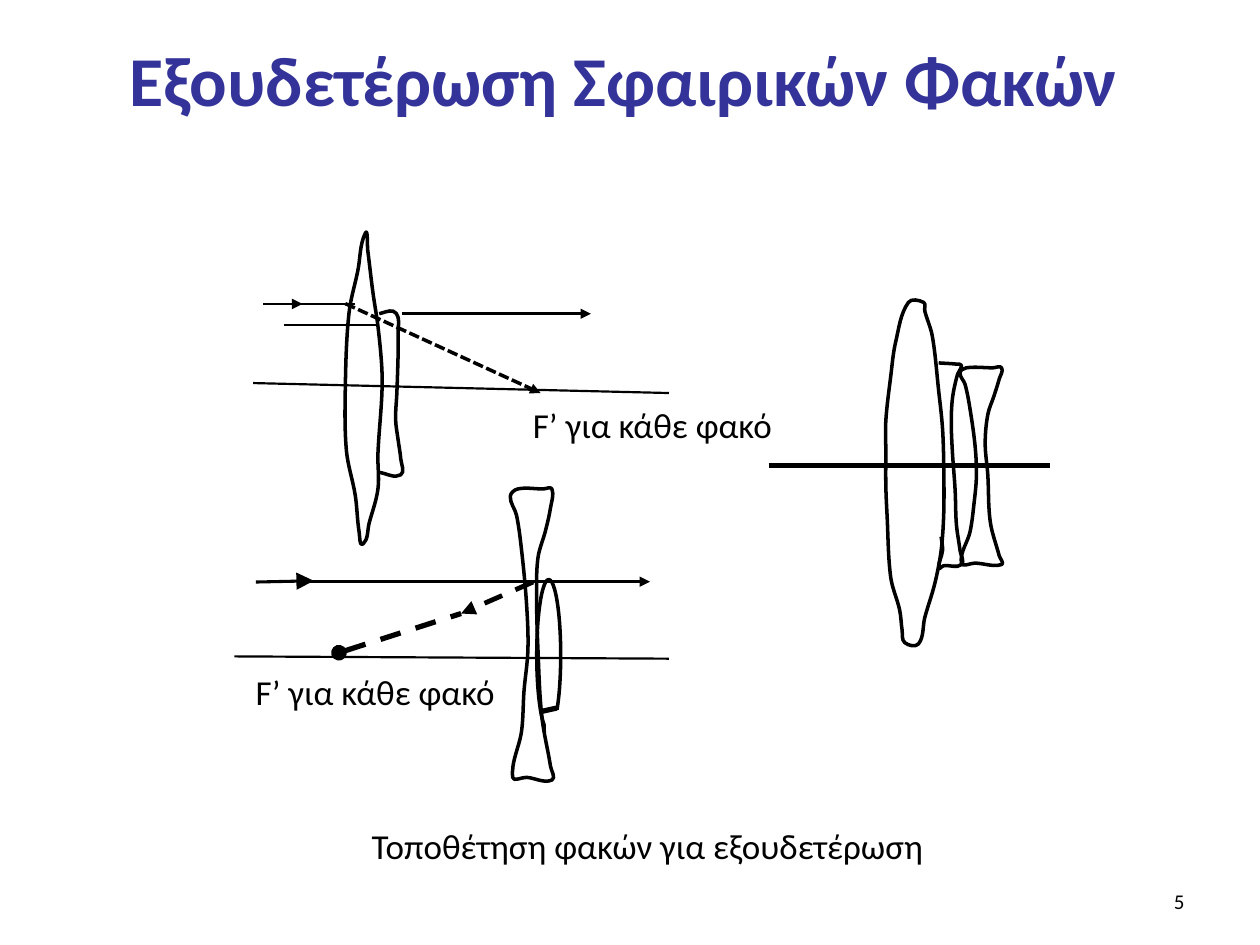
from math import hypot

from lxml import etree
from pptx import Presentation
from pptx.dml.color import RGBColor
from pptx.enum import dml, shapes, text
from pptx.oxml import ns
from pptx.util import Pt

COLORS = {"title": "333399", "ink": "000000", "paper": "FFFFFF"}
FONT = "Calibri"
FOCUS = "F’ για κάθε φακό"
DASH = dml.MSO_LINE.DASH
SYS_DASH = dml.MSO_LINE.SQUARE_DOT

# Lens outlines: points that a smooth curve runs through
CONVEX_TOP = [
    (208.8, 133.2), (204.5, 154.8), (199.4, 179.3), (197.3, 223.2), (198, 257.8),
    (203, 283), (205.2, 303.8), (207.4, 311), (211, 298.8), (216, 279.4),
    (216, 259.2), (218.2, 226), (218.2, 210.2), (216, 186.5), (213.1, 167),
    (210.2, 143.3)]
CONCAVE_TOP = [
    (216.7, 179.3), (224.6, 177.8), (227.5, 181.4), (227.5, 190.1), (227.5, 203),
    (226.8, 224.6), (226.1, 239.8), (227.5, 251.3), (229, 262.1), (229, 271.4),
    (216.7, 270)]
CONVEX_RIGHT = [
    (519.1, 172.8), (511.9, 195.1), (509, 215.3), (506.2, 240.5), (506.2, 257.8),
    (506.2, 277.2), (506.9, 293.8), (509, 329.8), (514.1, 348.5), (515.5, 360),
    (517, 367.2), (524.9, 367.9), (528.5, 352.8), (534.2, 333.4), (537.8, 314.6),
    (539.3, 293), (539.3, 266.4), (538.6, 244.8), (536.4, 223.2), (532.8, 192.2),
    (528.5, 177.8), (527.8, 172.8)]
MIDDLE_RIGHT = [
    (536.4, 207.4), (546.5, 208.1), (549.4, 208.8), (547.2, 213.8), (544.3, 227.5),
    (543.6, 241.9), (544.3, 259.2), (545.8, 280.1), (546.5, 299.5), (548.6, 314.6),
    (549.4, 322.6), (539.3, 323.3), (536.4, 324.7), (538.6, 314.6), (537.8, 306.7)]
CONCAVE_RIGHT = [
    (552.2, 210.2), (567.4, 210.2), (572.4, 210.2), (571, 216.7), (568.1, 226.1),
    (564.5, 236.9), (563, 253.4), (564.5, 271.4), (565.9, 298.1), (571, 317.5),
    (572.4, 322.6), (557.3, 321.8), (549.4, 321.8), (554.4, 303.8), (556.6, 288),
    (558, 272.2), (557.3, 255.6), (554.4, 234), (551.5, 219.6), (548.6, 213.1)]
CONCAVE_BOTTOM = [
    (295.9, 279.4), (310.3, 279.4), (315.4, 279.4), (314.6, 290.2), (311.8, 303.1),
    (307.4, 319), (306.7, 343.4), (307.4, 370.1), (309.6, 409), (314.6, 437.8),
    (315.4, 445.7), (301, 444.2), (293, 444.2), (298.1, 417.6), (299.5, 394.6),
    (301.7, 371.5), (301, 346.3), (298.1, 314.6), (295.2, 294.5), (291.6, 283.7)]


def rgb(name):
    return RGBColor.from_string(COLORS[name])


def bezier_sections(points, closed):
    """Control points and end of each section; tangents follow the neighbours."""
    n = len(points)

    def tangent(i):
        before, after = (i - 1, i + 1) if closed else (max(i - 1, 0), min(i + 1, n - 1))
        (x0, y0), (x1, y1) = points[before % n], points[after % n]
        size = hypot(x1 - x0, y1 - y0)
        return (x1 - x0) / size, (y1 - y0) / size

    for i in range(n if closed else n - 1):
        j = (i + 1) % n
        a, d = points[i], points[j]
        handle = hypot(d[0] - a[0], d[1] - a[1]) / 3
        b = [p + handle * t for p, t in zip(a, tangent(i))]
        c = [p - handle * t for p, t in zip(d, tangent(j))]
        yield b, c, d


def add_lens(slide, points, closed=True):
    corners = [(Pt(x), Pt(y)) for x, y in points]
    builder = slide.shapes.build_freeform(*corners[0])
    builder.add_line_segments(corners[1:], close=False)
    sp = builder.convert_to_shape()
    sp.shadow.inherit = False
    sp.fill.background()
    sp.line.color.rgb = rgb("ink")
    sp.line.width = Pt(2)
    # Curves in place of the straight sections
    outline = sp._element.find(".//" + ns.qn("a:path"))
    for section in outline.findall(ns.qn("a:lnTo")):
        outline.remove(section)
    for section in bezier_sections(points, closed):
        curve = etree.SubElement(outline, ns.qn("a:cubicBezTo"))
        for x, y in section:
            etree.SubElement(curve, ns.qn("a:pt"),
                             x=str(Pt(x) - sp.left), y=str(Pt(y) - sp.top))
    if closed:
        etree.SubElement(outline, ns.qn("a:close"))


def add_line(slide, x1, y1, x2, y2, width=1.25, dash=None, head=None, tail=None,
             tip="med"):
    cx = slide.shapes.add_connector(
        shapes.MSO_CONNECTOR.STRAIGHT, Pt(x1), Pt(y1), Pt(x2), Pt(y2))
    cx.line.color.rgb = rgb("ink")
    cx.line.width = Pt(width)
    if dash:
        cx.line.dash_style = dash
    ln = cx.line._get_or_add_ln()
    for tag, kind in (("a:headEnd", head), ("a:tailEnd", tail)):
        if kind:
            etree.SubElement(ln, ns.qn(tag), type=kind, w=tip, len=tip)
    etree.SubElement(cx._element.spPr, ns.qn("a:effectLst"))


def add_preset(slide, kind, x, y, w, h, line, fill=None):
    sp = slide.shapes.add_shape(kind, Pt(x), Pt(y), Pt(w), Pt(h))
    sp.shadow.inherit = False
    if fill:
        sp.fill.solid()
        sp.fill.fore_color.rgb = rgb(fill)
    else:
        sp.fill.background()
    sp.line.color.rgb = rgb(line)
    sp.line.width = Pt(2)


def write(sp, words, size, color="ink", align=text.PP_ALIGN.LEFT,
          anchor=text.MSO_ANCHOR.TOP, wrap=True, bold=False):
    tf = sp.text_frame
    tf.text = words
    tf.word_wrap = wrap
    tf.vertical_anchor = anchor
    p = tf.paragraphs[0]
    p.alignment = align
    font = p.runs[0].font
    font.name, font.size, font.bold = FONT, Pt(size), bold
    font.color.rgb = rgb(color)


def add_text(slide, x, y, w, h, words, size=20, **style):
    write(slide.shapes.add_textbox(Pt(x), Pt(y), Pt(w), Pt(h)), words, size, **style)


def draw_top_pair(slide):
    add_lens(slide, CONVEX_TOP)
    add_line(slide, 150.5, 173.7, 203, 173.7)
    add_line(slide, 150.5, 173.7, 172.8, 173.7, tail="triangle")
    add_line(slide, 229.7, 179.3, 337.7, 179.3, 1.5, tail="triangle")
    add_lens(slide, CONCAVE_TOP, closed=False)
    add_line(slide, 144.7, 218.9, 382.3, 224.6)
    add_line(slide, 197.3, 173.5, 308.9, 224.6, 2, SYS_DASH, tail="triangle")
    add_text(slide, 297.4, 226.8, 181.4, 31.7, FOCUS)


def draw_right_group(slide):
    add_lens(slide, CONVEX_RIGHT)
    add_lens(slide, MIDDLE_RIGHT, closed=False)
    add_lens(slide, CONCAVE_RIGHT)
    add_line(slide, 439.2, 266.1, 599.8, 266.1, 3)


def draw_bottom_pair(slide):
    add_lens(slide, CONCAVE_BOTTOM)
    add_line(slide, 172.8, 332.4, 371.5, 332.4, 1.75, tail="triangle")
    add_line(slide, 146.2, 332.6, 179.3, 331.9, 1.75, tail="triangle", tip="lg")
    add_line(slide, 304.6, 332.6, 263.5, 350.6, 2.75, DASH, tail="triangle")
    add_line(slide, 193.7, 373, 263.5, 350.6, 3, DASH, head="oval")
    add_line(slide, 133.9, 375.1, 382.3, 376.4)
    add_text(slide, 139, 379.4, 181.4, 31.7, FOCUS)
    # Convex lens cut off at its lower end
    add_preset(slide, shapes.MSO_SHAPE.OVAL, 306.7, 331.2, 13.7, 86.4, "ink")
    add_preset(slide, shapes.MSO_SHAPE.RECTANGLE, 313.2, 406.8, 28.8, 10.8,
               "paper", "paper")
    add_line(slide, 162, 185.8, 214.6, 185.8)  # second ray of the top pair
    add_line(slide, 308.2, 406.8, 318.2, 404.6, 3)


def main():
    prs = Presentation()
    prs.slide_width, prs.slide_height = Pt(720), Pt(540)
    slide = prs.slides.add_slide(prs.slide_layouts[5])
    center, middle = text.PP_ALIGN.CENTER, text.MSO_ANCHOR.MIDDLE

    # Title
    title = slide.shapes.title
    title.left, title.top, title.width, title.height = Pt(36.7), Pt(9.4), Pt(648), Pt(71.3)
    write(title, "Εξουδετέρωση Σφαιρικών Φακών ", 40, "title", center, middle, bold=True)

    # Diagrams
    draw_top_pair(slide)
    draw_right_group(slide)
    draw_bottom_pair(slide)

    # Caption and slide number
    add_text(slide, 200.2, 467.6, 344.2, 31.7, "Τοποθέτηση φακών για εξουδετέρωση ",
             align=center, wrap=False)
    add_text(slide, 516.2, 500.4, 167.8, 28.8, "5", 12,
             align=text.PP_ALIGN.RIGHT, anchor=middle)
    prs.save("out.pptx")


if __name__ == "__main__":
    main()
